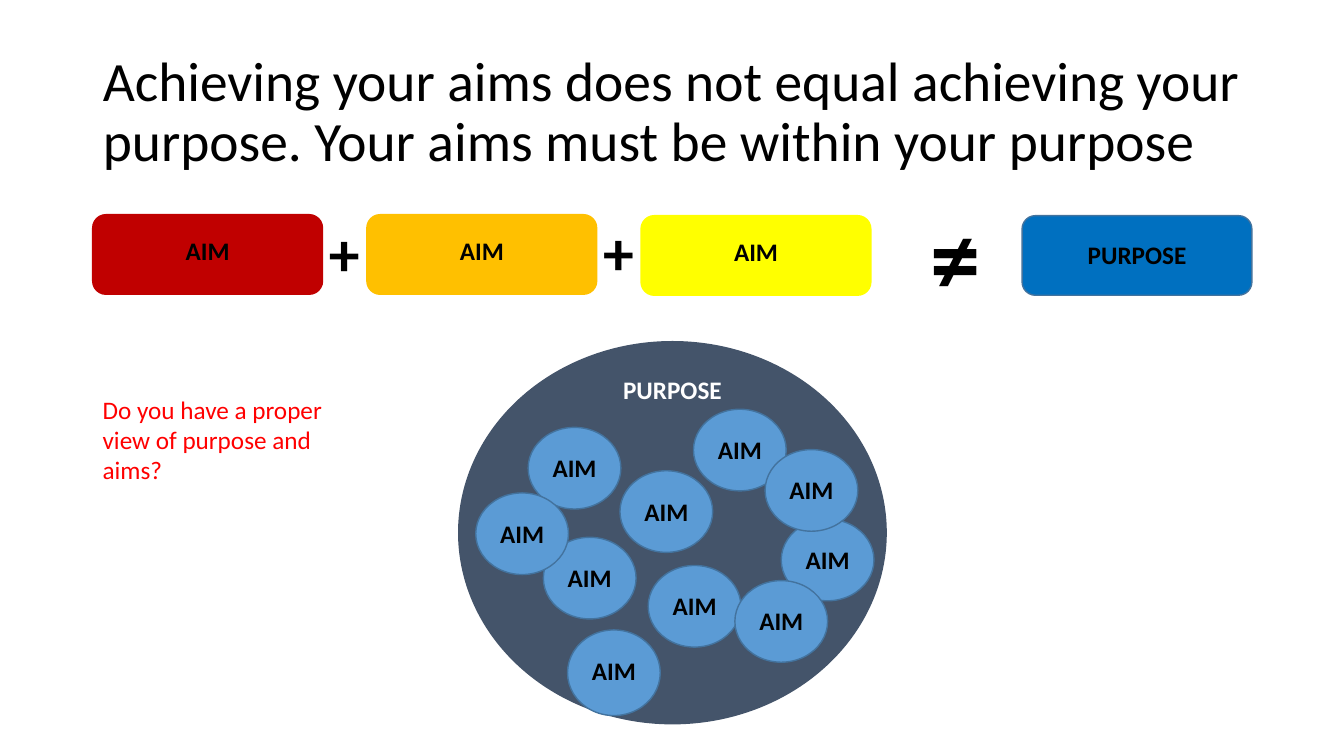
from dataclasses import dataclass

from pptx import Presentation
from pptx.dml.color import RGBColor
from pptx.enum.shapes import MSO_SHAPE
from pptx.enum.text import MSO_ANCHOR, MSO_AUTO_SIZE, PP_ALIGN
from pptx.shapes.autoshape import Shape
from pptx.slide import Slide
from pptx.util import Inches, Pt

SLIDE_WIDTH, SLIDE_HEIGHT = Inches(13.33), Inches(7.5)


@dataclass(frozen=True)
class Theme:
    font: str = "Calibri"
    title_size: float = 39.6
    label_size: float = 18
    plus_size: float = 44
    unequal_size: float = 72
    black: str = "000000"
    white: str = "FFFFFF"
    red: str = "FF0000"
    crimson: str = "C00000"
    orange: str = "FFC000"
    yellow: str = "FFFF00"
    blue: str = "0070C0"
    slate: str = "44546A"
    sky: str = "5B9BD5"
    outline: str = "43739E"


THEME = Theme()


@dataclass(frozen=True)
class Area:
    """A rectangle in percent of the slide's width and height."""
    left: float
    top: float
    width: float
    height: float

    def box(self) -> dict[str, int]:
        return {
            "left": round(SLIDE_WIDTH * self.left / 100),
            "top": round(SLIDE_HEIGHT * self.top / 100),
            "width": round(SLIDE_WIDTH * self.width / 100),
            "height": round(SLIDE_HEIGHT * self.height / 100),
        }


@dataclass(frozen=True)
class Badge:
    """A filled shape with a label centred across it."""
    text: str
    area: Area
    kind: MSO_SHAPE
    fill: str
    line: str
    label_drop: float
    label_width: float
    text_color: str = THEME.black


@dataclass(frozen=True)
class Sign:
    text: str
    area: Area
    size: float


def write(shape: Shape, text: str, size: float, color: str, bold: bool,
          align: PP_ALIGN) -> None:
    frame = shape.text_frame
    frame.word_wrap = True
    para = frame.paragraphs[0]
    para.alignment = align
    span = para.add_run()
    span.text = text
    font_format = {"name": THEME.font, "size": Pt(size), "bold": bold}
    for name, value in font_format.items():
        setattr(span.font, name, value)
    span.font.color.rgb = RGBColor.from_string(color)


def add_text(page: Slide, text: str, area: Area, size: float = THEME.label_size,
             color: str = THEME.black, bold: bool = True,
             align: PP_ALIGN = PP_ALIGN.CENTER) -> None:
    box = page.shapes.add_textbox(**area.box())
    write(box, text, size, color, bold, align)
    box.text_frame.auto_size = MSO_AUTO_SIZE.SHAPE_TO_FIT_TEXT


def add_badge(page: Slide, badge: Badge) -> None:
    area = badge.area
    shape = page.shapes.add_shape(badge.kind, **area.box())
    shape.shadow.inherit = False
    shape.fill.solid()
    shape.fill.fore_color.rgb = RGBColor.from_string(badge.fill)
    shape.line.color.rgb = RGBColor.from_string(badge.line)
    shape.line.width = Pt(1)
    label = Area(area.left + (area.width - badge.label_width) / 2,
                 area.top + badge.label_drop, badge.label_width, 5.38)
    add_text(page, badge.text, label, color=badge.text_color)


def add_title(page: Slide, text: str, area: Area) -> None:
    title = page.shapes.title
    for name, value in area.box().items():
        setattr(title, name, value)
    write(title, text, THEME.title_size, THEME.black, False, PP_ALIGN.LEFT)
    title.text_frame.auto_size = MSO_AUTO_SIZE.NONE
    title.text_frame.vertical_anchor = MSO_ANCHOR.MIDDLE
    title.text_frame.paragraphs[0].line_spacing = 0.9


# Equation row: aims at an equal step, then the purpose
MARGIN, AIM_STEP, LABEL_WIDTH = 6.9, 20.4, 14.48
PILL_WIDTH, PILL_HEIGHT = 17.1, 10.53
AIM_PILLS = [(THEME.crimson, 28.4), (THEME.orange, 28.4), (THEME.yellow, 28.53)]
PILLS = [
    Badge("AIM", Area(MARGIN + column * AIM_STEP, top, PILL_WIDTH, PILL_HEIGHT),
          MSO_SHAPE.ROUNDED_RECTANGLE, color, color, 2.13, LABEL_WIDTH)
    for column, (color, top) in enumerate(AIM_PILLS)
] + [
    Badge("PURPOSE", Area(76.05, 28.53, PILL_WIDTH, PILL_HEIGHT),
          MSO_SHAPE.ROUNDED_RECTANGLE, THEME.blue, THEME.outline, 2.53, LABEL_WIDTH),
]
SIGNS = [
    Sign("+", Area(23.7, 27.73, 3.83, 11.2), THEME.plus_size),
    Sign("+", Area(23.7 + AIM_STEP, 27.6, 3.83, 11.2), THEME.plus_size),
    Sign("≠", Area(68.48, 24.93, 3.83, 17.47), THEME.unequal_size),
]

# Purpose circle with the aims inside it, from back to front
PURPOSE = Badge("PURPOSE", Area(34.13, 45.2, 31.8, 50.53), MSO_SHAPE.OVAL,
                THEME.slate, THEME.slate, 3.6, LABEL_WIDTH, THEME.white)
BUBBLE_WIDTH, BUBBLE_HEIGHT, TALL_BUBBLE = 6.9, 10.8, 11.33
BUBBLES = [
    Badge("AIM", Area(left, top, BUBBLE_WIDTH, height), MSO_SHAPE.OVAL,
          THEME.sky, THEME.outline, 2.67, BUBBLE_WIDTH)
    for left, top, height in [
        (39.3, 56.53, BUBBLE_HEIGHT), (46.13, 62.27, BUBBLE_HEIGHT),
        (58.13, 68.67, BUBBLE_HEIGHT), (40.43, 71.07, BUBBLE_HEIGHT),
        (48.23, 74.8, BUBBLE_HEIGHT), (51.6, 54.13, BUBBLE_HEIGHT),
        (56.93, 59.47, BUBBLE_HEIGHT), (35.4, 65.2, BUBBLE_HEIGHT),
        (42.23, 83.33, TALL_BUBBLE), (54.68, 76.8, BUBBLE_HEIGHT),
    ]
]


def main() -> None:
    deck = Presentation()
    deck.slide_width, deck.slide_height = SLIDE_WIDTH, SLIDE_HEIGHT
    page = deck.slides.add_slide(deck.slide_layouts[5])

    add_title(page, "Achieving your aims does not equal achieving your purpose. "
              "Your aims must be within your purpose", Area(MARGIN, 5.33, 86.25, 19.33))
    for badge in PILLS:
        add_badge(page, badge)
    for sign in SIGNS:
        add_text(page, sign.text, sign.area, sign.size)
    for badge in [PURPOSE, *BUBBLES]:
        add_badge(page, badge)

    # Question beside the circle
    add_text(page, "Do you have a proper view of purpose and aims?",
             Area(MARGIN, 51.47, 18.15, 13.47), color=THEME.red, bold=False,
             align=PP_ALIGN.LEFT)
    deck.save("out.pptx")


if __name__ == "__main__":
    main()
